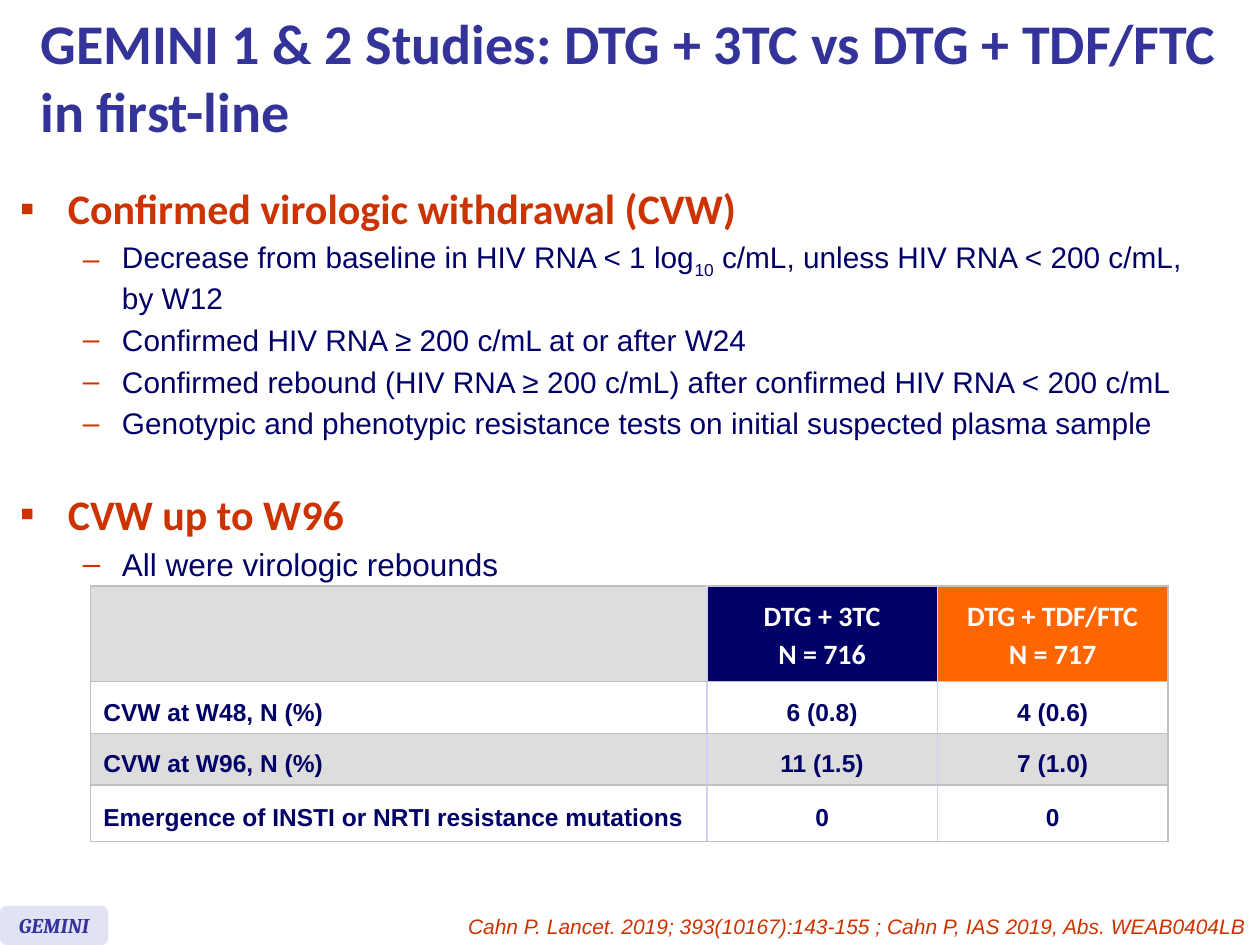
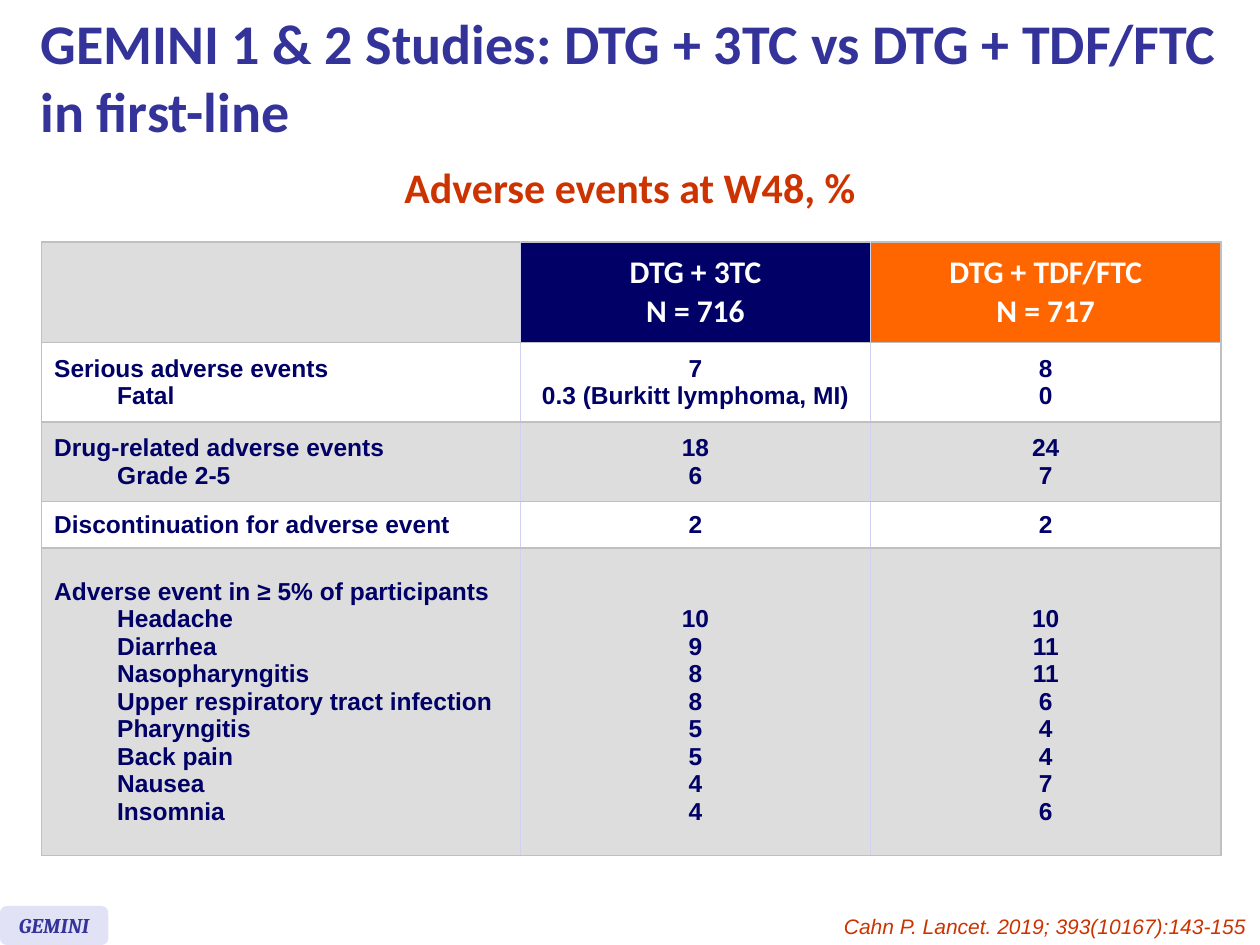
"""Build two slides on the GEMINI 1 & 2 studies: virologic withdrawal and adverse events."""
import pptx
import pptx.dml.color
import pptx.enum.shapes
import pptx.enum.text
import pptx.oxml
import pptx.oxml.ns
import pptx.util

Inches, Pt = pptx.util.Inches, pptx.util.Pt
PP_ALIGN, ANCHOR = pptx.enum.text.PP_ALIGN, pptx.enum.text.MSO_ANCHOR
NAVY, INDIGO, RED, ORANGE = "000066", "333399", "CC3300", "FF6600"
WHITE, GREY, LAVENDER = "FFFFFF", "DDDDDD", "E2E2F6"
BORDER, INNER_BORDER = "C0C0C0", "D0D0F0"
TITLE = "GEMINI 1 & 2 Studies: DTG + 3TC vs DTG + TDF/FTC in first-line"
HEADER = ["", "DTG + 3TC\nN = 716", "DTG + TDF/FTC\nN = 717"]


def rgb(color):
    return pptx.dml.color.RGBColor.from_string(color)


def write(p, text, font="Arial", size=14, color=NAVY, bold=False, italic=False,
          align=PP_ALIGN.LEFT, baseline=0):
    p.alignment = align
    r = p.add_run()
    r.text = text
    r.font.name, r.font.size = font, Pt(size)
    r.font.bold, r.font.italic = bold, italic
    r.font.color.rgb = rgb(color)
    if baseline:
        r._r.get_or_add_rPr().set("baseline", str(baseline * 1000))


prs = pptx.Presentation()
prs.slide_width, prs.slide_height = Inches(10), Inches(7.5)

slides = [
    dict(source="Cahn P. Lancet. 2019; 393(10167):143-155 ; Cahn P, IAS 2019, Abs. WEAB0404LB",
         at=(0.72, 4.65), cols=[4.89, 1.83, 1.83], heights=[0.76, 0.41, 0.41, 0.45],
         header_size=16, spacing=Pt(21.6),
         rows=[HEADER,
               ["CVW at W48, N (%)", "6 (0.8)", "4 (0.6)"],
               ["CVW at W96, N (%)", "11 (1.5)", "7 (1.0)"],
               ["Emergence of INSTI or NRTI resistance mutations", "0", "0"]]),
    dict(source="Cahn P. Lancet. 2019; 393(10167):143-155",
         at=(0.33, 1.92), cols=[3.8, 2.78, 2.78], heights=[0.8, 0.63, 0.63, 0.37, 2.44],
         header_size=18, spacing=None,
         rows=[HEADER,
               ["Serious adverse events\nFatal", "7\n0.3 (Burkitt lymphoma, MI)", "8\n0"],
               ["Drug-related adverse events\nGrade 2-5", "18\n6", "24\n7"],
               ["Discontinuation for adverse event", "2", "2"],
               ["Adverse event in ≥ 5% of participants\nHeadache\nDiarrhea\nNasopharyngitis\n"
                "Upper respiratory tract infection\nPharyngitis\nBack pain\nNausea\nInsomnia",
                "10\n9\n8\n8\n5\n5\n4\n4", "10\n11\n11\n6\n4\n4\n7\n6"]]),
]

for data in slides:
    s = prs.slides.add_slide(prs.slide_layouts[5])
    sp = s.shapes.title
    sp.left, sp.top, sp.width, sp.height = Inches(0.22), 0, Inches(9.76), Inches(1.21)
    tf = sp.text_frame
    tf.auto_size = pptx.enum.text.MSO_AUTO_SIZE.NONE
    tf.vertical_anchor = ANCHOR.MIDDLE
    write(tf.paragraphs[0], TITLE, font="Calibri", size=32, color=INDIGO, bold=True)

    sp = s.shapes.add_shape(pptx.enum.shapes.MSO_SHAPE.ROUNDED_RECTANGLE,
                            0, Inches(7.19), Inches(0.86), Inches(0.31))
    sp.shadow.inherit = False
    sp.fill.solid()
    sp.fill.fore_color.rgb = rgb(LAVENDER)
    sp.line.fill.background()
    tf = sp.text_frame
    tf.word_wrap = False
    tf.vertical_anchor = ANCHOR.MIDDLE
    write(tf.paragraphs[0], "GEMINI", font="Cambria", size=12, color=INDIGO,
          bold=True, italic=True, align=PP_ALIGN.CENTER)

    tf = s.shapes.add_textbox(Inches(1.68), Inches(7.2), Inches(8.31), Inches(0.3)).text_frame
    tf.word_wrap = True
    write(tf.paragraphs[0], data["source"], size=12, color=RED, italic=True,
          align=PP_ALIGN.RIGHT)

    rows, cols, heights = data["rows"], data["cols"], data["heights"]
    left, top = data["at"]
    table = s.shapes.add_table(len(rows), len(cols), Inches(left), Inches(top),
                               Inches(sum(cols)), Inches(sum(heights))).table
    table.first_row = table.horz_banding = False
    for col, width in zip(table.columns, cols):
        col.width = Inches(width)
    for row, height in zip(table.rows, heights):
        row.height = Inches(height)

    for i, row in enumerate(rows):
        for j, text in enumerate(row):
            cell = table.cell(i, j)
            cell.vertical_anchor = ANCHOR.MIDDLE
            cell.fill.solid()
            band = WHITE if i % 2 else GREY
            cell.fill.fore_color.rgb = rgb([GREY, NAVY, ORANGE][j] if i == 0 else band)
            lines = text.split("\n") if text else []
            if lines and len(lines) < len(row[0].split("\n")):
                cell.margin_top = Inches(0.27)
            for k, line in enumerate(lines):
                tf = cell.text_frame
                p = tf.add_paragraph() if k else tf.paragraphs[0]
                if data["spacing"]:
                    p.line_spacing = data["spacing"]
                if j == 0 and k:
                    p.level = 1
                    p._p.get_or_add_pPr().set("marL", str(Inches(0.5)))
                style = (dict(font="Calibri", size=data["header_size"], color=WHITE)
                         if i == 0 else {})
                write(p, line, bold=True,
                      align=PP_ALIGN.CENTER if j else PP_ALIGN.LEFT, **style)
            sides = [("lnL", INNER_BORDER if j else BORDER),
                     ("lnR", INNER_BORDER if j < len(cols) - 1 else BORDER),
                     ("lnT", BORDER), ("lnB", BORDER)]
            for n, (side, color) in enumerate(sides):
                cell._tc.get_or_add_tcPr().insert(n, pptx.oxml.parse_xml(
                    f'<a:{side} {pptx.oxml.ns.nsdecls("a")} w="12700"><a:solidFill>'
                    f'<a:srgbClr val="{color}"/></a:solidFill></a:{side}>'))

bullets = [
    (0, 24, 0, ["Confirmed virologic withdrawal (CVW)"]),
    (1, 17, 3.5, ["Decrease from baseline in HIV RNA < 1 log", "10",
                  " c/mL, unless HIV RNA < 200 c/mL, by W12"]),
    (1, 17, 3.5, ["Confirmed HIV RNA ≥ 200 c/mL at or after W24"]),
    (1, 17, 3.5, ["Confirmed rebound (HIV RNA ≥ 200 c/mL) after confirmed HIV RNA < 200 c/mL"]),
    (1, 17, 3.5, ["Genotypic and phenotypic resistance tests on initial suspected plasma sample"]),
    (0, 24, 27, ["CVW up to W96"]),
    (1, 18, 3.5, ["All were virologic rebounds"]),
]
tf = prs.slides[0].shapes.add_textbox(Inches(0.06), Inches(1.4), Inches(9.49),
                                      Inches(3.2)).text_frame
tf.word_wrap = True
for i, (level, size, before, parts) in enumerate(bullets):
    p = tf.add_paragraph() if i else tf.paragraphs[0]
    p.level = level
    p.space_before = Pt(before)
    margin, hang, char = [(0.38, 0.38, "▪"), (0.81, 0.31, "–")][level]
    pPr = p._p.get_or_add_pPr()
    pPr.set("marL", str(Inches(margin)))
    pPr.set("indent", str(-Inches(hang)))
    for tag in (f'buClr {pptx.oxml.ns.nsdecls("a")}><a:srgbClr val="{RED}"/></a:buClr>',
                f'buFont {pptx.oxml.ns.nsdecls("a")} typeface="Arial"/>',
                f'buChar {pptx.oxml.ns.nsdecls("a")} char="{char}"/>'):
        pPr.append(pptx.oxml.parse_xml("<a:" + tag))
    style = {} if level else dict(font="Calibri", color=RED, bold=True)
    for k, part in enumerate(parts):
        write(p, part, size=size, baseline=-25 if k == 1 else 0, **style)

tf = prs.slides[1].shapes.add_textbox(Inches(0.58), Inches(1.23), Inches(8.84),
                                      Inches(0.5)).text_frame
tf.word_wrap = True
write(tf.paragraphs[0], "Adverse events at W48, %", font="Calibri", size=24, color=RED,
      bold=True, align=PP_ALIGN.CENTER)

prs.save("out.pptx")
